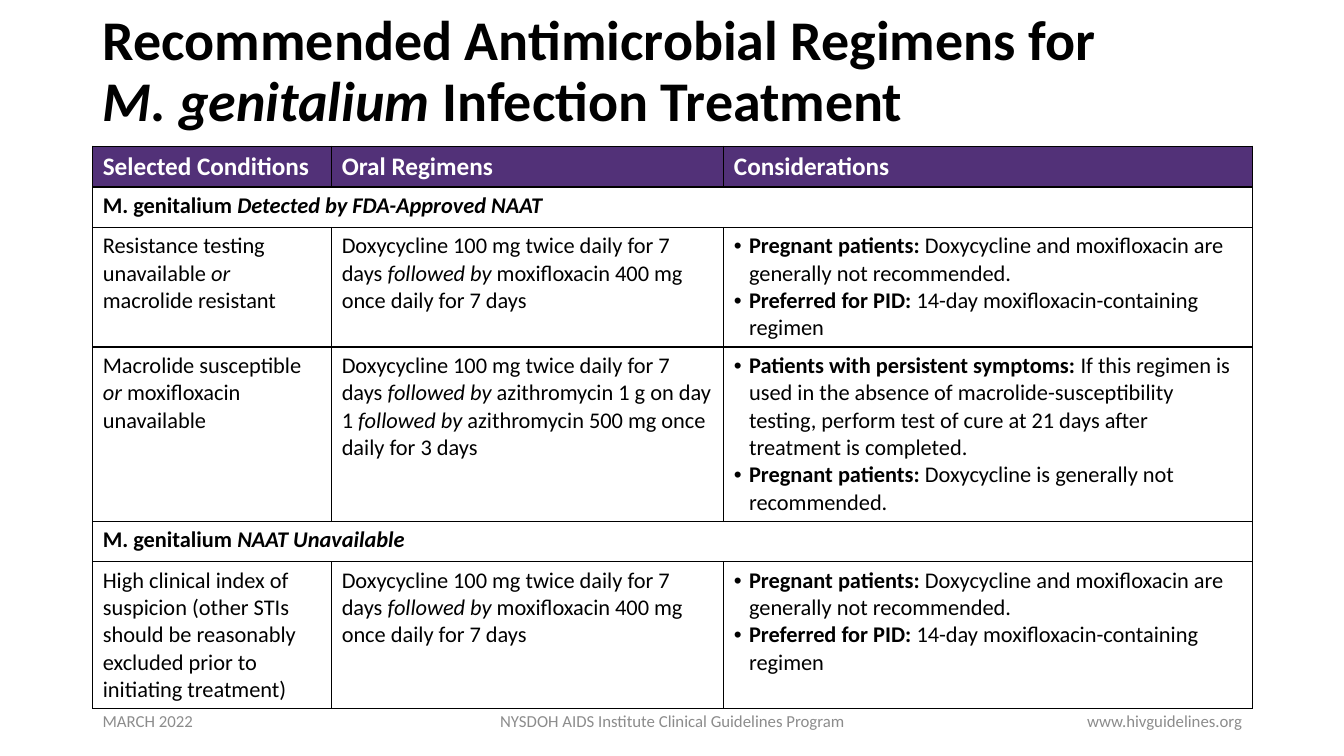
from dataclasses import dataclass

from lxml.etree import SubElement
from pptx import Presentation
from pptx.dml.color import RGBColor
from pptx.enum.text import MSO_ANCHOR, MSO_AUTO_SIZE, PP_ALIGN
from pptx.oxml.ns import qn
from pptx.util import Inches, Pt

FONT = "Calibri"
BLACK, WHITE, PURPLE, GREY = "000000", "FFFFFF", "523178", "8C8C8C"
MARGIN, COLUMN, ROW = Inches(0.92), Inches(0.5), Inches(0.05)
GRID_COLUMNS = 23
TABLE_COLUMNS = (4.74, 7.78, 10.48)
TABLE_ROWS = (8, 8, 23.6, 34.4, 8, 28.4)
BULLET_INDENT = Inches(0.15)


@dataclass(frozen=True)
class Run:
    text: str
    bold: bool = False
    italic: bool = False


@dataclass(frozen=True)
class Area:
    column: float
    row: float
    columns: float
    rows: float

    def bounds(self) -> tuple:
        return (MARGIN + int(self.column * COLUMN), int(self.row * ROW),
                int(self.columns * COLUMN), int(self.rows * ROW))


@dataclass(frozen=True)
class Footer:
    text: str
    area: Area
    alignment: PP_ALIGN


@dataclass(frozen=True)
class Regimen:
    condition: list[Run]
    oral: list[Run]
    considerations: list[list[Run]]


def color(hex_value: str) -> RGBColor:
    return RGBColor.from_string(hex_value)


def add_runs(paragraph, runs: list[Run], size: float, hex_value: str) -> None:
    for item in runs:
        run = paragraph.add_run()
        run.text = item.text
        run.font.name = FONT
        run.font.size = Pt(size)
        run.font.bold = item.bold
        run.font.italic = item.italic
        run.font.color.rgb = color(hex_value)


def add_bullet(paragraph) -> None:
    properties = paragraph._p.get_or_add_pPr()
    properties.set("marL", str(BULLET_INDENT))
    properties.set("indent", str(-BULLET_INDENT))
    SubElement(properties, qn("a:buFont"), typeface="Arial")
    SubElement(properties, qn("a:buChar"), char="•")


def style_cell(cell, fill: str | None = None) -> None:
    """Give a cell black borders and a solid fill, or no fill."""
    properties = cell._tc.get_or_add_tcPr()
    for side in ("lnL", "lnR", "lnT", "lnB"):
        line = SubElement(properties, qn(f"a:{side}"), w=str(Pt(1)))
        solid = SubElement(line, qn("a:solidFill"))
        SubElement(solid, qn("a:srgbClr"), val=BLACK)
    if fill:
        cell.fill.solid()
        cell.fill.fore_color.rgb = color(fill)
    else:
        cell.fill.background()


def fill_cell(cell, paragraphs: list[list[Run]], size: float = 16,
              hex_value: str = BLACK, bulleted: bool = False) -> None:
    frame = cell.text_frame
    for index, runs in enumerate(paragraphs):
        paragraph = frame.add_paragraph() if index else frame.paragraphs[0]
        if bulleted:
            add_bullet(paragraph)
        add_runs(paragraph, runs, size, hex_value)


def add_title(slide) -> None:
    title = slide.shapes.title
    title.left, title.top, title.width, title.height = Area(0, 0, GRID_COLUMNS, 29).bounds()
    frame = title.text_frame
    frame.word_wrap = True
    frame.auto_size = MSO_AUTO_SIZE.NONE
    frame.vertical_anchor = MSO_ANCHOR.MIDDLE
    paragraph = frame.paragraphs[0]
    paragraph.alignment = PP_ALIGN.LEFT
    paragraph.line_spacing = 0.9
    add_runs(paragraph, [Run("Recommended Antimicrobial Regimens for ", bold=True)], 40, BLACK)
    paragraph.add_line_break()
    add_runs(paragraph, [Run("M. genitalium ", bold=True, italic=True),
                         Run("Infection Treatment", bold=True)], 40, BLACK)


def add_regimen_table(slide, headers: tuple, body: list[Regimen | str]) -> None:
    """Draw the table; a plain string in the body is a section row across all columns."""
    area = Area(0, 29, GRID_COLUMNS, sum(TABLE_ROWS))
    table = slide.shapes.add_table(len(TABLE_ROWS), len(TABLE_COLUMNS), *area.bounds()).table
    table.first_row = table.horz_banding = False
    for column, width in zip(table.columns, TABLE_COLUMNS):
        column.width = int(width * COLUMN)
    for row, height in zip(table.rows, TABLE_ROWS):
        row.height = int(height * ROW)

    for cell, header in zip(table.rows[0].cells, headers):
        style_cell(cell, PURPLE)
        fill_cell(cell, [[Run(header, bold=True)]], 18, WHITE)

    for index, entry in enumerate(body, start=1):
        cells = list(table.rows[index].cells)
        for cell in cells:
            style_cell(cell)
        if isinstance(entry, str):
            cells[0].merge(cells[-1])
            fill_cell(cells[0], [[Run("M. genitalium ", bold=True),
                                  Run(entry, bold=True, italic=True)]])
        else:
            fill_cell(cells[0], [entry.condition])
            fill_cell(cells[1], [entry.oral])
            fill_cell(cells[2], entry.considerations, bulleted=True)


def add_footer(slide, footer: Footer) -> None:
    frame = slide.shapes.add_textbox(*footer.area.bounds()).text_frame
    frame.word_wrap = True
    frame.vertical_anchor = MSO_ANCHOR.MIDDLE
    paragraph = frame.paragraphs[0]
    paragraph.alignment = footer.alignment
    add_runs(paragraph, [Run(footer.text)], 12, GREY)


DOXYCYCLINE = Run("Doxycycline 100 mg twice daily for 7 days ")
FOLLOWED_BY = Run("followed by", italic=True)
MOXIFLOXACIN_ORAL = [DOXYCYCLINE, FOLLOWED_BY,
                     Run(" moxifloxacin 400 mg once daily for 7 days")]
PREGNANT = Run("Pregnant patients:", bold=True)
MOXIFLOXACIN_NOTES = [
    [PREGNANT, Run(" Doxycycline and moxifloxacin are generally not recommended.")],
    [Run("Preferred for PID:", bold=True), Run(" 14-day moxifloxacin-containing regimen")],
]
HEADERS = ("Selected Conditions", "Oral Regimens", "Considerations")
BODY = [
    "Detected by FDA-Approved NAAT",
    Regimen([Run("Resistance testing unavailable "), Run("or", italic=True),
             Run(" macrolide resistant")],
            MOXIFLOXACIN_ORAL, MOXIFLOXACIN_NOTES),
    Regimen([Run("Macrolide susceptible "), Run("or ", italic=True),
             Run("moxifloxacin unavailable")],
            [DOXYCYCLINE, FOLLOWED_BY, Run(" azithromycin 1 g on day 1 "),
             FOLLOWED_BY, Run(" azithromycin 500 mg once daily for 3 days")],
            [[Run("Patients with persistent symptoms:", bold=True),
              Run(" If this regimen is used in the absence of macrolide-susceptibility "
                  "testing, perform test of cure at 21 days after treatment is completed.")],
             [PREGNANT, Run(" Doxycycline is generally not recommended.")]]),
    "NAAT Unavailable",
    Regimen([Run("High clinical index of suspicion (other STIs should be reasonably "
                 "excluded prior to initiating treatment)")],
            MOXIFLOXACIN_ORAL, MOXIFLOXACIN_NOTES),
]
FOOTERS = [
    Footer("MARCH 2022", Area(0, 139, 6, 8), PP_ALIGN.LEFT),
    Footer("NYSDOH AIDS Institute Clinical Guidelines Program", Area(7, 139, 9, 8),
           PP_ALIGN.CENTER),
    Footer("www.hivguidelines.org", Area(17, 139, 6, 8), PP_ALIGN.RIGHT),
]


def main() -> None:
    presentation = Presentation()
    presentation.slide_width, presentation.slide_height = Inches(13.33), Inches(7.5)
    slide = presentation.slides.add_slide(presentation.slide_layouts.get_by_name("Title Only"))
    add_title(slide)
    add_regimen_table(slide, HEADERS, BODY)
    for footer in FOOTERS:
        add_footer(slide, footer)
    presentation.save("out.pptx")


if __name__ == "__main__":
    main()
